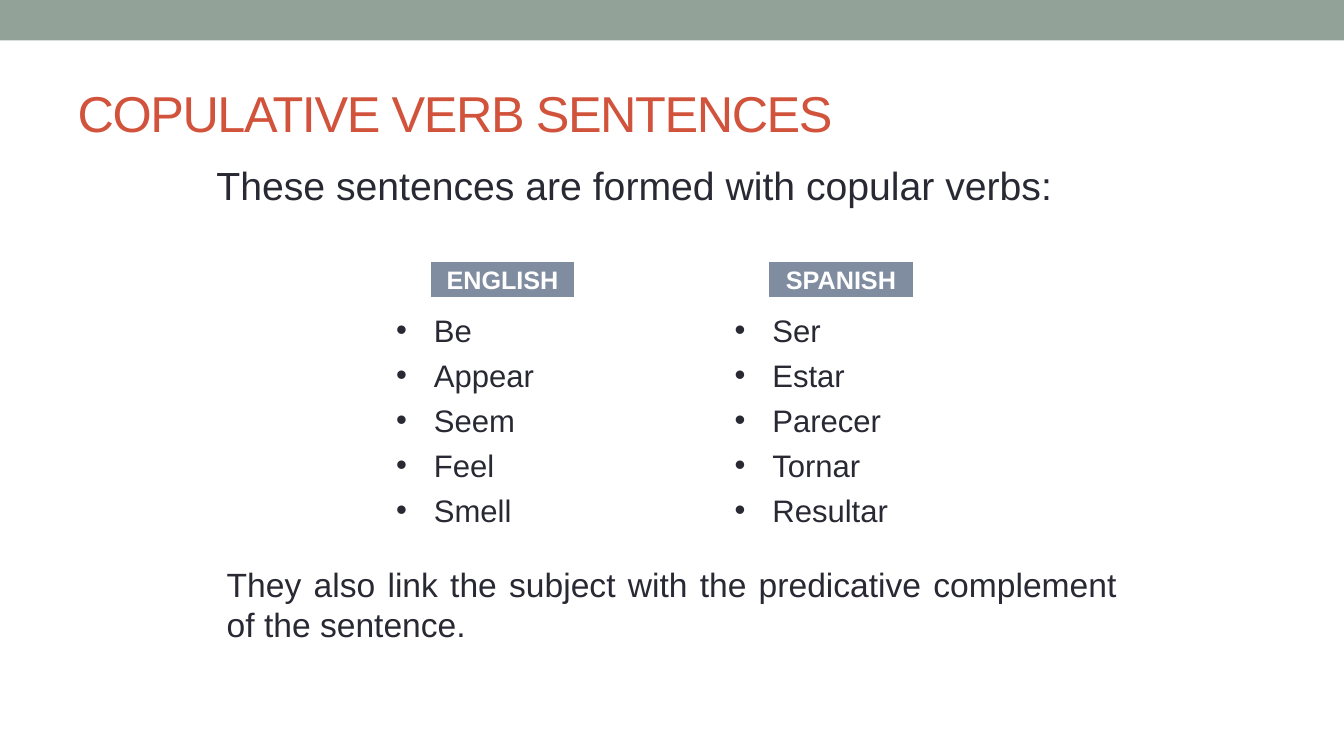
from dataclasses import dataclass

import pptx
import pptx.dml.color
import pptx.enum.shapes
import pptx.enum.text
import pptx.oxml
import pptx.util

Cm, Pt = pptx.util.Cm, pptx.util.Pt
ALIGN = pptx.enum.text.PP_ALIGN
ANCHOR = pptx.enum.text.MSO_ANCHOR


@dataclass(frozen=True)
class Theme:
    font: str = "Arial"
    band: str = "93A299"
    accent: str = "D2533C"
    ink: str = "292934"
    label: str = "808DA0"
    white: str = "FFFFFF"
    title_size: float = 36
    intro_size: float = 28
    closing_size: float = 24
    list_size: float = 22.2
    label_size: float = 18


class SlideBuilder:
    """Holds the theme and the current slide."""

    def __init__(self, slide, theme):
        self.slide = slide
        self.theme = theme

    def color(self, value):
        return pptx.dml.color.RGBColor.from_string(value)

    def place(self, holder, left, top, width, height, anchor=ANCHOR.TOP):
        holder.left, holder.top = Cm(left), Cm(top)
        holder.width, holder.height = Cm(width), Cm(height)
        frame = holder.text_frame
        frame.word_wrap = True
        frame.auto_size = pptx.enum.text.MSO_AUTO_SIZE.NONE
        frame.vertical_anchor = anchor
        return frame

    def add_text(self, paragraph, text, size, color, align=ALIGN.LEFT, bold=False):
        paragraph.alignment = align
        run = paragraph.add_run()
        run.text = text
        run.font.name = self.theme.font
        run.font.size = Pt(size)
        run.font.bold = bold
        run.font.color.rgb = self.color(color)
        return run

    def rectangle(self, left, top, width, height, fill, line=None):
        shape = self.slide.shapes.add_shape(
            pptx.enum.shapes.MSO_SHAPE.RECTANGLE,
            Cm(left), Cm(top), Cm(width), Cm(height))
        shape.shadow.inherit = False
        shape.fill.solid()
        shape.fill.fore_color.rgb = self.color(fill)
        if line:
            shape.line.color.rgb = self.color(line)
            shape.line.width = Pt(3.5)
        else:
            shape.line.fill.background()
        return shape

    def title(self, text, *box):
        frame = self.place(self.slide.shapes.title, *box, anchor=ANCHOR.MIDDLE)
        run = self.add_text(frame.paragraphs[0], text,
                            self.theme.title_size, self.theme.accent)
        run._r.get_or_add_rPr().set("spc", "-100")

    def statement(self, index, text, size, *box):
        frame = self.place(self.slide.placeholders[index], *box)
        self.add_text(frame.paragraphs[0], text, size, self.theme.ink, ALIGN.JUSTIFY)

    def bullets(self, index, items, *box):
        frame = self.place(self.slide.placeholders[index], *box)
        for number, item in enumerate(items):
            paragraph = frame.add_paragraph() if number else frame.paragraphs[0]
            self.add_text(paragraph, item, self.theme.list_size, self.theme.ink)
            paragraph.space_before = Pt(5.5)
            # Hanging indent and bullet mark
            properties = paragraph._p.get_or_add_pPr()
            properties.set("marL", str(Cm(0.95)))
            properties.set("indent", str(-Cm(0.95)))
            namespace = pptx.oxml.ns.nsdecls("a")
            for tag in ('buFont {} typeface="Arial"', 'buChar {} char="•"'):
                properties.append(
                    pptx.oxml.parse_xml("<a:" + tag.format(namespace) + "/>"))

    def label(self, text, *box):
        shape = self.rectangle(*box, self.theme.label, self.theme.white)
        frame = self.place(shape, *box)
        self.add_text(frame.paragraphs[0], text, self.theme.label_size,
                      self.theme.white, ALIGN.CENTER, bold=True)


def main():
    theme = Theme()
    deck = pptx.Presentation()
    deck.slide_width, deck.slide_height = Cm(33.87), Cm(19.05)
    comparison_layout = deck.slide_layouts[4]
    builder = SlideBuilder(deck.slides.add_slide(comparison_layout), theme)

    # Top band, heading and introduction
    builder.rectangle(0, 0, 33.87, 1.02, theme.band)
    builder.title("COPULATIVE VERB SENTENCES", 1.7, 1.47, 30.48, 2.74)
    builder.statement(1, "These sentences are formed with copular verbs:",
                      theme.intro_size, 5.2, 3.94, 22.94, 3)

    # One labelled verb list per language
    verbs = {
        "ENGLISH": (2, ["Be", "Appear", "Seem", "Feel", "Smell"]),
        "SPANISH": (4, ["Ser", "Estar", "Parecer", "Tornar", "Resultar"]),
    }
    for column, (language, (index, words)) in enumerate(verbs.items()):
        left = 9.73 + column * 8.53
        builder.bullets(index, words, left, 7.72, 5.87, 5.13)
        builder.label(language, left + 1.07, 6.53, 3.73, 1.02)

    # Closing remark
    builder.statement(3, "They also link the subject with the predicative "
                      "complement of the sentence.",
                      theme.closing_size, 5.46, 14.07, 22.94, 3)

    deck.save("out.pptx")


if __name__ == "__main__":
    main()
